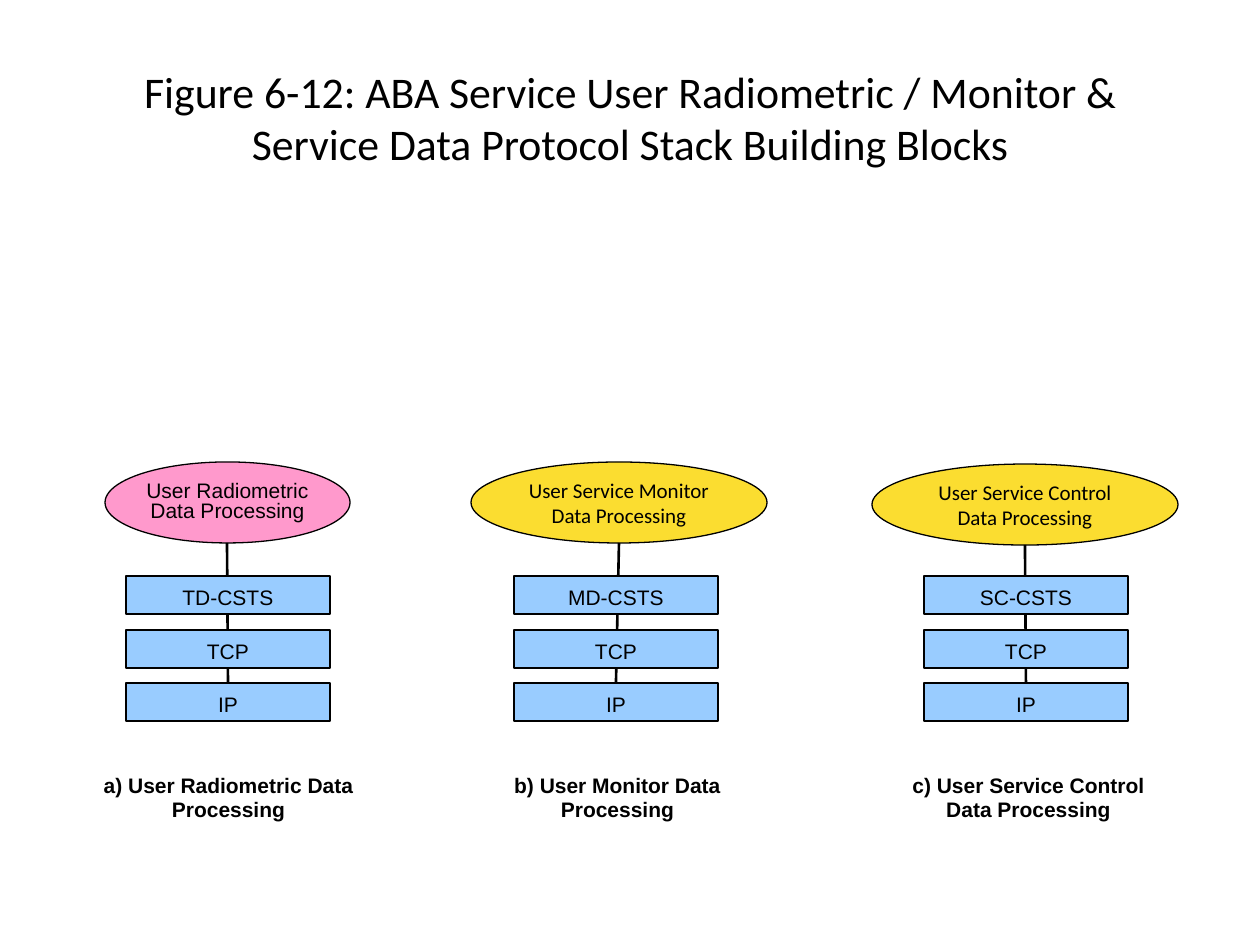
from dataclasses import dataclass

from lxml import etree
from pptx import Presentation, util as u
from pptx.dml.color import RGBColor
from pptx.enum import shapes, text
from pptx.oxml.ns import qn


@dataclass(frozen=True)
class Theme:
    ink: str = "000000"
    pink: str = "FF99CC"
    gold: str = "FBDD30"
    blue: str = "99CCFF"
    head: int = 25
    body: int = 12
    sans: str = "Arial"
    title: str = "Calibri"
    edge: float = 0.75
    link: float = 1.5


T = Theme()
DPI = 126
BOX_W, BOX_H = 204, 38
OVAL_H = 81
ROWS = (576, 630, 683)  # tops of service, TCP and IP layers

# oval: left, top, width; cap: left, width
STACKS = (
    dict(oval=(105, 462, 245), fill=T.pink, font=T.sans, lead=0.8,
         name="User Radiometric\nData Processing", left=126, top="TD-CSTS",
         cap=(73, 311), note="a) User Radiometric Data Processing"),
    dict(oval=(471, 462, 296), fill=T.gold, font=T.title, lead=None,
         name="User Service Monitor Data Processing", left=514, top="MD-CSTS",
         cap=(462, 311), note="b) User Monitor Data Processing"),
    dict(oval=(872, 464, 306), fill=T.gold, font=T.title, lead=None,
         name="User Service Control Data Processing", left=924, top="SC-CSTS",
         cap=(892, 273), note="c) User Service Control Data Processing"),
)


def px(n):
    return u.Emu(round(n * 914400 / DPI))


def rgb(code):
    return RGBColor.from_string(code)


def write(shape, words, size=T.body, font=T.sans, bold=False, lead=None,
          pad=(13, 6, 13, 6)):
    """Fill a shape with centred text, one paragraph per line."""
    frame = shape.text_frame
    frame.word_wrap = True
    frame.vertical_anchor = text.MSO_ANCHOR.MIDDLE
    (frame.margin_left, frame.margin_top,
     frame.margin_right, frame.margin_bottom) = map(px, pad)
    frame.text = words
    for para in frame.paragraphs:
        para.alignment = text.PP_ALIGN.CENTER
        para.line_spacing = lead
        for run in para.runs:
            run.font.size = u.Pt(size)
            run.font.name = font
            run.font.bold = bold
            run.font.color.rgb = rgb(T.ink)


def label(slide, area, words, **form):
    write(slide.shapes.add_textbox(*map(px, area)), words, **form)


def block(slide, kind, area, fill, words, **form):
    shape = slide.shapes.add_shape(kind, *map(px, area))
    shape.shadow.inherit = False
    shape.fill.solid()
    shape.fill.fore_color.rgb = rgb(fill)
    shape.line.color.rgb = rgb(T.ink)
    shape.line.width = u.Pt(T.edge)
    write(shape, words, **form)


def link(slide, *ends):
    line = slide.shapes.add_connector(shapes.MSO_CONNECTOR.STRAIGHT,
                                      *map(px, ends))
    line.line.color.rgb = rgb(T.ink)
    line.line.width = u.Pt(T.link)
    etree.SubElement(line._element.spPr, qn("a:effectLst"))


def stack(slide, part):
    kinds = shapes.MSO_SHAPE
    left, top, wide = part["oval"]
    # User process
    block(slide, kinds.OVAL, (left, top, wide, OVAL_H), part["fill"],
          part["name"], font=part["font"], lead=part["lead"],
          pad=(0, 0, 0, 0))
    # Link from process to the lowest layer, behind the other layers
    link(slide, left + wide // 2, top + OVAL_H,
         part["left"] + BOX_W // 2, ROWS[-1])
    # Protocol layers
    for y, name in zip(ROWS, (part["top"], "TCP", "IP")):
        block(slide, kinds.RECTANGLE, (part["left"], y, BOX_W, BOX_H),
              T.blue, name, pad=(5, 4, 5, 0))
    # Caption
    x, span = part["cap"]
    label(slide, (x, 766, span, 63), part["note"], bold=True, lead=u.Pt(14))


def main():
    deck = Presentation()
    deck.slide_width, deck.slide_height = px(1260), px(945)
    slide = deck.slides.add_slide(deck.slide_layouts[6])
    # Title
    label(slide, (63, 38, 1134, 158),
          "Figure 6-12: ABA Service User Radiometric / Monitor & "
          "Service Data Protocol Stack Building Blocks",
          size=T.head, font=T.title)
    for part in STACKS:
        stack(slide, part)
    deck.save("out.pptx")


if __name__ == "__main__":
    main()
